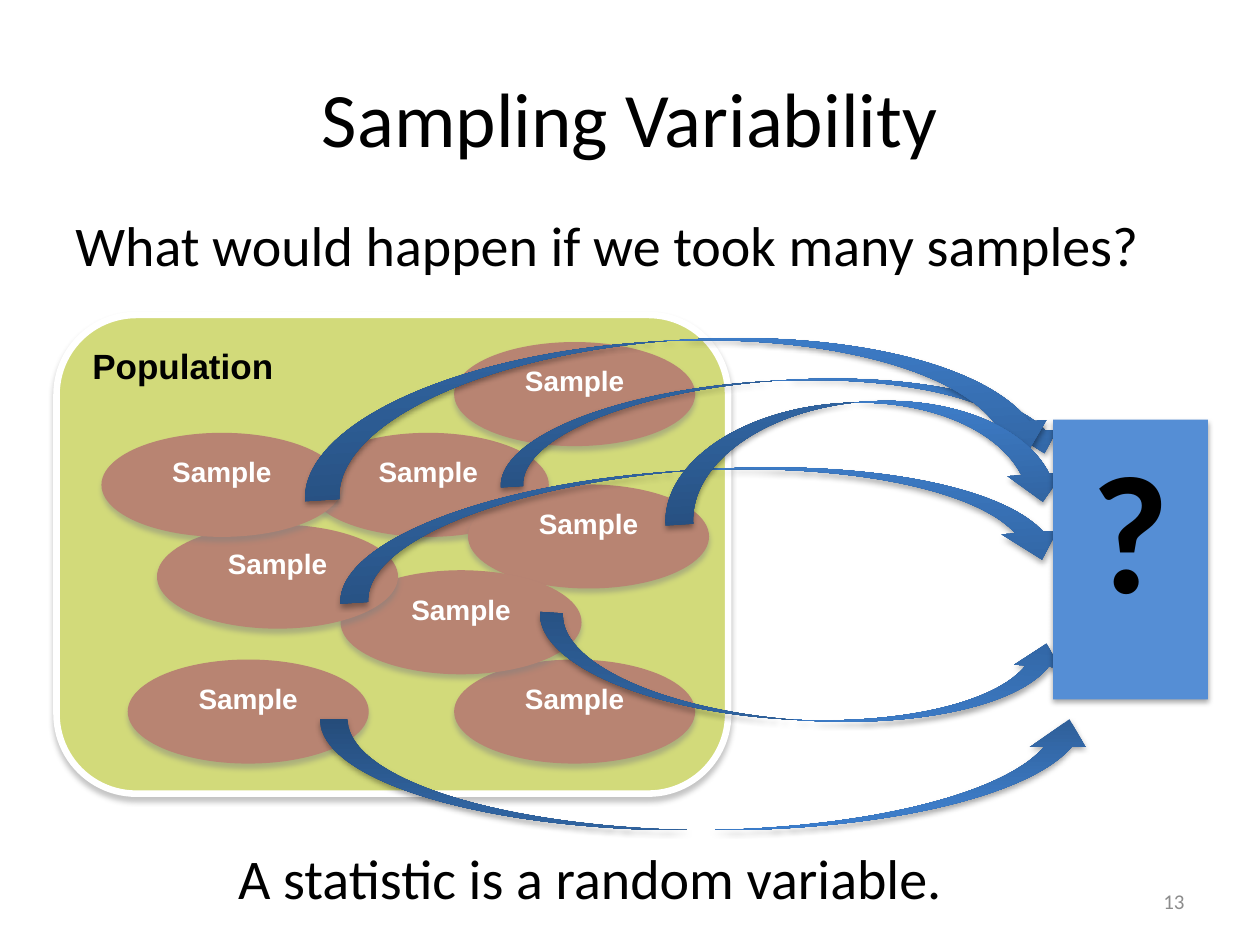
from lxml.etree import SubElement
from pptx import Presentation
from pptx.dml.color import RGBColor
from pptx.enum.shapes import MSO_SHAPE
from pptx.enum.text import MSO_ANCHOR, PP_ALIGN
from pptx.oxml import parse_xml
from pptx.oxml.ns import nsdecls, qn
from pptx.util import Cm, Pt

BLACK = RGBColor(0x00, 0x00, 0x00)
WHITE = RGBColor(0xFF, 0xFF, 0xFF)
GRAY = RGBColor(0x8C, 0x8C, 0x8C)
SHADOW_GRAY = RGBColor(0x80, 0x80, 0x80)
GREEN = RGBColor(0xD2, 0xDA, 0x7A)
BROWN = RGBColor(0xB8, 0x84, 0x72)
BLUE = RGBColor(0x55, 0x8E, 0xD5)
ARROW_STOPS = [
    (0, RGBColor(0x2F, 0x5F, 0x99)),
    (80, RGBColor(0x3D, 0x7C, 0xC7)),
    (100, RGBColor(0x3A, 0x7C, 0xCB)),
]

SAMPLE_SIZE = (4.83, 2.07)
# Left and top in cm, from back to front
SAMPLES = [
    (6.22, 8.74), (9.45, 9.78), (9.17, 13.31), (9.17, 6.91),
    (6.88, 11.51), (3.18, 10.59), (2.59, 13.31), (2.06, 8.74),
]
# Box in cm, rotation in degrees, whether flipped upside down
ARROWS = [
    ((10.03, 7.67, 11.43, 1.8), -3.6, False),
    ((10.82, 12.67, 10.69, 1.85), 3.6, True),
    ((6.78, 9.47, 14.73, 2.24), -3.6, False),
    ((6.05, 6.86, 15.24, 2.77), -3.6, False),
    ((6.45, 14.5, 15.67, 2.24), 0, True),
    ((13.34, 8.1, 8.18, 2.24), -3.6, False),
]


def write_text(shape, text, *, size, font="Calibri", color=BLACK, bold=False,
               align=PP_ALIGN.LEFT, anchor=MSO_ANCHOR.TOP, wrap=True):
    frame = shape.text_frame
    frame.word_wrap = wrap
    frame.vertical_anchor = anchor
    paragraph = frame.paragraphs[0]
    paragraph.alignment = align
    run = paragraph.add_run()
    run.text = text
    run.font.size = Pt(size)
    run.font.name = font
    run.font.bold = bold
    run.font.color.rgb = color


def add_text(slide, box, text, **text_format):
    text_box = slide.shapes.add_textbox(*map(Cm, box))
    write_text(text_box, text, **text_format)


def add_shadow(shape, color, opacity, blur, distance):
    """Give the shape a shadow straight below it; blur and distance in points."""
    shape.shadow.inherit = False
    effects = shape.element.spPr.find(qn("a:effectLst"))
    shadow = SubElement(effects, qn("a:outerShdw"), blurRad=str(Pt(blur)),
                        dist=str(Pt(distance)), dir="5400000", rotWithShape="0")
    shadow_color = SubElement(shadow, qn("a:srgbClr"), val=str(color))
    SubElement(shadow_color, qn("a:alpha"), val=str(opacity * 1000))


def add_filled_shape(slide, kind, box, fill, line=None, line_width=0):
    shape = slide.shapes.add_shape(kind, *map(Cm, box))
    shape.fill.solid()
    shape.fill.fore_color.rgb = fill
    if line is None:
        shape.line.fill.background()
    else:
        shape.line.color.rgb = line
        shape.line.width = Pt(line_width)
    return shape


def add_population(slide):
    population = add_filled_shape(slide, MSO_SHAPE.ROUNDED_RECTANGLE,
                                  (1.14, 6.35, 13.54, 9.65), GREEN, WHITE, 3.75)
    add_shadow(population, SHADOW_GRAY, 45, 3, 2.4)
    write_text(population, "Population", size=20, font="Arial", bold=True)


def add_sample(slide, left, top):
    sample = add_filled_shape(slide, MSO_SHAPE.OVAL, (left, top, *SAMPLE_SIZE),
                              BROWN, BROWN, 0.79)
    add_shadow(sample, SHADOW_GRAY, 45, 3, 2.4)
    write_text(sample, "Sample", size=16, font="Arial", color=WHITE, bold=True,
               align=PP_ALIGN.CENTER)


def add_curved_arrow(slide, box, rotation, flipped):
    arrow = slide.shapes.add_shape(MSO_SHAPE.CURVED_DOWN_ARROW, *map(Cm, box))
    arrow.rotation = rotation
    properties = arrow.element.spPr
    if flipped:
        properties.find(qn("a:xfrm")).set("flipV", "1")
    stops = "".join(
        f'<a:gs pos="{position * 1000}"><a:srgbClr val="{color}"/></a:gs>'
        for position, color in ARROW_STOPS)
    gradient = parse_xml(
        f'<a:gradFill {nsdecls("a")} rotWithShape="1"><a:gsLst>{stops}</a:gsLst>'
        '<a:lin ang="16200000" scaled="0"/></a:gradFill>')
    properties.find(qn("a:prstGeom")).addnext(gradient)
    arrow.line.fill.background()
    add_shadow(arrow, BLACK, 35, 3.1, 1.8)


def add_question_box(slide):
    question = add_filled_shape(slide, MSO_SHAPE.RECTANGLE,
                                (21.23, 8.46, 3.12, 5.64), BLUE)
    add_shadow(question, BLACK, 35, 3.1, 1.8)
    write_text(question, "?", size=96, bold=True, align=PP_ALIGN.CENTER, wrap=False)


def main():
    presentation = Presentation()
    presentation.slide_width = Cm(25.4)
    presentation.slide_height = Cm(19.05)
    slide = presentation.slides.add_slide(presentation.slide_layouts[6])

    add_text(slide, (1.27, 0.76, 22.86, 3.18), "Sampling Variability", size=44,
             align=PP_ALIGN.CENTER, anchor=MSO_ANCHOR.MIDDLE)
    add_text(slide, (1.27, 4.11, 22.86, 12.57),
             "What would happen if we took many samples?", size=32)
    add_text(slide, (18.21, 17.65, 5.92, 1.02), "13", size=12, color=GRAY,
             align=PP_ALIGN.RIGHT, anchor=MSO_ANCHOR.MIDDLE)
    add_population(slide)
    for left, top in SAMPLES:
        add_sample(slide, left, top)
    for box, rotation, flipped in ARROWS:
        add_curved_arrow(slide, box, rotation, flipped)
    add_question_box(slide)
    add_text(slide, (4.55, 16.87, 14.88, 1.63), "A statistic is a random variable.",
             size=32, wrap=False)

    presentation.save("out.pptx")


if __name__ == "__main__":
    main()
